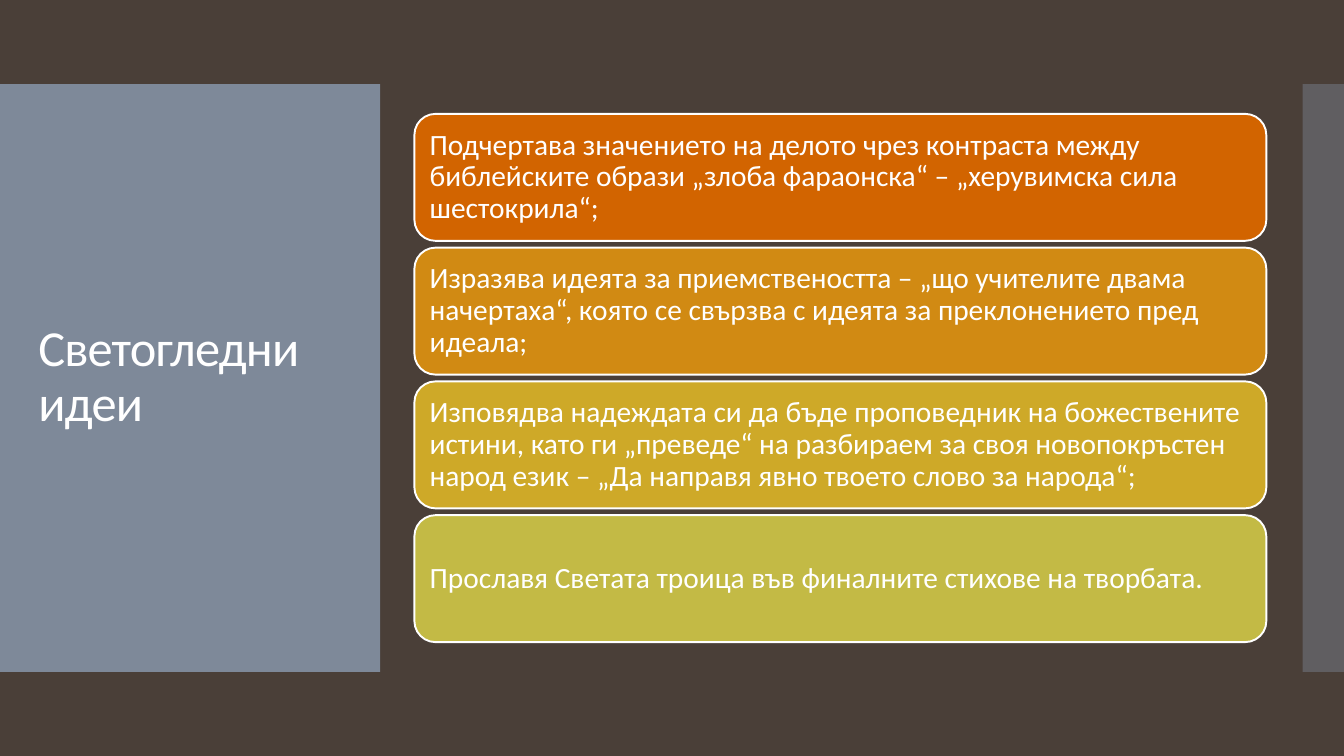
from lxml import etree
from pptx import Presentation
from pptx.dml.color import RGBColor
from pptx.enum.shapes import MSO_SHAPE
from pptx.enum.text import MSO_ANCHOR, PP_ALIGN
from pptx.oxml.ns import qn
from pptx.util import Inches, Pt

RECTANGLE = MSO_SHAPE.RECTANGLE
ROUNDED = MSO_SHAPE.ROUNDED_RECTANGLE
MIDDLE = MSO_ANCHOR.MIDDLE
LEFT = PP_ALIGN.LEFT
TITLE_ONLY = 5

WIDTH, HEIGHT = 13.33, 7.5
BAND_TOP, BAND_HEIGHT = HEIGHT / 9, HEIGHT * 7 / 9
IDEA_LEFT, IDEA_TOP = 4.11, 1.13
IDEA_WIDTH, IDEA_HEIGHT = 8.45, 1.26
IDEA_PITCH = 1.327
IDEA_INSET = 0.09
WHITE, BROWN, SLATE = "FFFFFF", "4A3F38", "818E9F"

TITLE = "Светогледни идеи"
IDEAS = [
    ("D26400", "Подчертава значението на делото чрез контраста между библейските образи "
               "„злоба фараонска“ – „херувимска сила шестокрила“;"),
    ("D18A13", "Изразява идеята за приемствеността – „що учителите двама начертаха“, "
               "която се свързва с идеята за преклонението пред идеала;"),
    ("CEA928", "Изповядва надеждата си да бъде проповедник на божествените истини, "
               "като ги „преведе“ на разбираем за своя новопокръстен народ език – "
               "„Да направя явно твоето слово за народа“;"),
    ("C3BA45", "Прославя Светата троица във финалните стихове на творбата."),
]


def paint(fill, color):
    fill.solid()
    fill.fore_color.rgb = RGBColor.from_string(color)


def write(frame, text, size):
    frame.text = text
    frame.word_wrap = True
    frame.vertical_anchor = MIDDLE
    paragraph = frame.paragraphs[0]
    paragraph.alignment = LEFT
    paragraph.line_spacing = 0.9
    run = paragraph.runs[0]
    run.font.name = "Calibri"
    run.font.size = Pt(size)
    paint(run.font.fill, WHITE)
    return run


def add_block(slide, kind, left, top, width, height, color):
    block = slide.shapes.add_shape(
        kind, Inches(left), Inches(top), Inches(width), Inches(height))
    block.shadow.inherit = False
    paint(block.fill, color)
    return block


def add_side_panel(slide, left, width, opacity):
    panel = add_block(slide, RECTANGLE, left, BAND_TOP, width, BAND_HEIGHT, SLATE)
    panel.line.fill.background()
    tint = panel.element.spPr.find(qn("a:solidFill"))[0]
    etree.SubElement(tint, qn("a:alpha")).set("val", str(opacity * 1000))


def place_title(slide):
    title = slide.shapes.title
    title.left, title.top = Inches(0.28), Inches(1.23)
    title.width, title.height = Inches(3.22), Inches(5.03)
    run = write(title.text_frame, TITLE, 36)
    run.font.element.set("spc", "-60") if hasattr(run.font, "element") else \
        run.text and run.font.fill and paragraph_spacing(title)
    slide.shapes.element.append(title.element)


def paragraph_spacing(title):
    for properties in title.element.iter(qn("a:rPr")):
        properties.set("spc", "-60")


def add_idea(slide, row, color, text):
    card = add_block(slide, ROUNDED, IDEA_LEFT, IDEA_TOP + row * IDEA_PITCH,
                     IDEA_WIDTH, IDEA_HEIGHT, color)
    paint(card.line.fill, WHITE)
    card.line.width = Pt(1.35)
    frame = card.text_frame
    frame.margin_left = frame.margin_right = Inches(IDEA_INSET)
    frame.margin_top = frame.margin_bottom = Inches(IDEA_INSET)
    write(frame, text, 21)


def main():
    deck = Presentation()
    deck.slide_width, deck.slide_height = Inches(WIDTH), Inches(HEIGHT)
    slide = deck.slides.add_slide(deck.slide_layouts[TITLE_ONLY])
    paint(slide.background.fill, BROWN)
    add_side_panel(slide, 0, 3.77, 95)
    add_side_panel(slide, 12.92, WIDTH - 12.92, 40)
    place_title(slide)
    for row, (color, text) in enumerate(IDEAS):
        add_idea(slide, row, color, text)
    deck.save("out.pptx")


if __name__ == "__main__":
    main()
